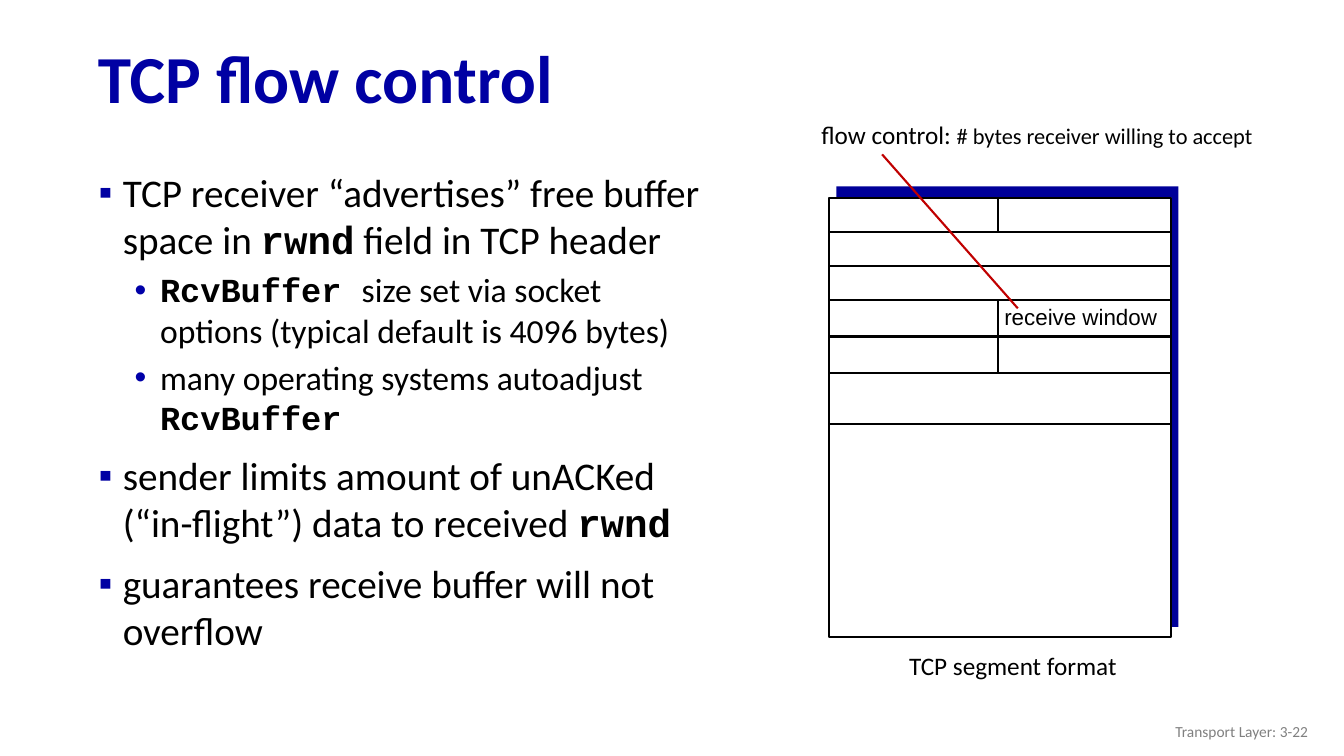
import itertools

import pptx
import pptx.dml.color
import pptx.enum.shapes
import pptx.enum.text
import pptx.oxml
import pptx.oxml.ns
import pptx.util
from lxml import etree

Cm = pptx.util.Cm
Pt = pptx.util.Pt
RGBColor = pptx.dml.color.RGBColor
Align = pptx.enum.text.PP_ALIGN
Anchor = pptx.enum.text.MSO_ANCHOR

TITLE_BLUE = RGBColor(0x00, 0x00, 0xA3)
BULLET_BLUE = RGBColor(0x00, 0x00, 0xA8)
SHADOW_BLUE = RGBColor(0x00, 0x00, 0x99)
RED = RGBColor(0xC0, 0x00, 0x00)
GRAY = RGBColor(0x80, 0x80, 0x80)
BLACK = RGBColor(0x00, 0x00, 0x00)
WHITE = RGBColor(0xFF, 0xFF, 0xFF)

BODY_FONT = "Calibri"
CODE_FONT = "Courier New"

# size, space before, left margin, hanging indent, bullet and its colour
LEVELS = [
    (28, 10, 0.99, -0.61, "▪", TITLE_BLUE),
    (24, 5, 1.93, -0.64, "•", BULLET_BLUE),
]
# level and runs; a run is its text and whether it is code
POINTS = [
    (0, [("TCP receiver “advertises” free buffer space in ", False),
         ("rwnd", True), (" field in TCP header", False)]),
    (1, [("RcvBuffer ", True),
         ("size set via socket options (typical default is 4096 bytes)", False)]),
    (1, [("many operating systems autoadjust ", False), ("RcvBuffer", True)]),
    (0, [("sender limits amount of unACKed (“in-flight”) data to received ", False),
         ("rwnd", True)]),
    (0, [("guarantees receive buffer will not overflow", False)]),
]

SEGMENT_LEFT, SEGMENT_TOP = 20.9, 4.98
SEGMENT_WIDTH, SEGMENT_HEIGHT = 8.62, 11.07
ROW_HEIGHTS = [0.86, 0.87, 0.86, 0.91, 0.92, 1.29]
MIDDLE = 25.16


def add_run(paragraph, text, size=18, font=BODY_FONT, color=BLACK, bold=False):
    run = paragraph.add_run()
    run.text = text
    run.font.size = Pt(size)
    run.font.name = font
    run.font.bold = bold
    run.font.color.rgb = color


def add_bullet(paragraph, margin, indent, character, color):
    properties = paragraph._p.get_or_add_pPr()
    properties.set("marL", str(Cm(margin)))
    properties.set("indent", str(Cm(indent)))
    qn = pptx.oxml.ns.qn
    bullet_color = etree.SubElement(properties, qn("a:buClr"))
    etree.SubElement(bullet_color, qn("a:srgbClr"), val=str(color))
    etree.SubElement(properties, qn("a:buFont"), typeface="Arial")
    etree.SubElement(properties, qn("a:buChar"), char=character)


class SlideBuilder:
    """Holds the slide and the line style shared by its elements."""

    line_width = Pt(1.5)

    def __init__(self, presentation):
        self.slide = presentation.slides.add_slide(presentation.slide_layouts[1])

    def place(self, shape, left, top, width, height, anchor):
        shape.left, shape.top = Cm(left), Cm(top)
        shape.width, shape.height = Cm(width), Cm(height)
        frame = shape.text_frame
        frame.word_wrap = True
        frame.auto_size = pptx.enum.text.MSO_AUTO_SIZE.NONE
        frame.vertical_anchor = anchor
        return frame

    def title(self, text, *box):
        frame = self.place(self.slide.shapes.title, *box, Anchor.MIDDLE)
        paragraph = frame.paragraphs[0]
        paragraph.alignment = Align.LEFT
        paragraph.line_spacing = 0.9
        add_run(paragraph, text, size=48, color=TITLE_BLUE, bold=True)

    def points(self, points, *box):
        frame = self.place(self.slide.placeholders[1], *box, Anchor.TOP)
        for number, (level, runs) in enumerate(points):
            paragraph = frame.add_paragraph() if number else frame.paragraphs[0]
            size, space, *bullet = LEVELS[level]
            paragraph.level = level
            paragraph.space_before = Pt(space)
            add_bullet(paragraph, *bullet)
            for text, code in runs:
                add_run(paragraph, text, size=size, bold=code,
                        font=CODE_FONT if code else BODY_FONT)

    def label(self, runs, *box, align=Align.LEFT, anchor=Anchor.TOP,
              spacing=1.0, wrap=True):
        """Add a text box; each run is its text and a dict of its format."""
        shape = self.slide.shapes.add_textbox(0, 0, 0, 0)
        frame = self.place(shape, *box, anchor)
        frame.word_wrap = wrap
        paragraph = frame.paragraphs[0]
        paragraph.alignment = align
        paragraph.line_spacing = spacing
        for text, style in runs:
            add_run(paragraph, text, **style)

    def rectangle(self, left, top, width, height, fill, line=None):
        shape = self.slide.shapes.add_shape(
            pptx.enum.shapes.MSO_SHAPE.RECTANGLE,
            Cm(left), Cm(top), Cm(width), Cm(height))
        shape.shadow.inherit = False
        shape.fill.solid()
        shape.fill.fore_color.rgb = fill
        if line is None:
            shape.line.fill.background()
        else:
            shape.line.color.rgb = line
            shape.line.width = self.line_width

    def line(self, x1, y1, x2, y2, color=BLACK):
        connector = self.slide.shapes.add_connector(
            pptx.enum.shapes.MSO_CONNECTOR.STRAIGHT,
            Cm(x1), Cm(y1), Cm(x2), Cm(y2))
        connector.line.color.rgb = color
        connector.line.width = self.line_width
        properties = connector._element.spPr
        etree.SubElement(properties, pptx.oxml.ns.qn("a:effectLst"))


def draw_segment(builder):
    builder.rectangle(21.08, 4.7, SEGMENT_WIDTH, 11.1, SHADOW_BLUE)
    builder.rectangle(SEGMENT_LEFT, SEGMENT_TOP, SEGMENT_WIDTH, SEGMENT_HEIGHT,
                      WHITE, line=BLACK)
    edges = list(itertools.accumulate(ROW_HEIGHTS, initial=SEGMENT_TOP))
    for edge in edges[1:]:
        builder.line(SEGMENT_LEFT, edge, SEGMENT_LEFT + SEGMENT_WIDTH, edge)
    for first, last in [(0, 1), (3, 5)]:
        builder.line(MIDDLE, edges[first], MIDDLE, edges[last])


def main():
    presentation = pptx.Presentation()
    presentation.slide_width = Cm(33.87)
    presentation.slide_height = Cm(19.05)
    builder = SlideBuilder(presentation)
    builder.title("TCP flow control", 2.21, 0.81, 31.65, 2.49)
    builder.points(POINTS, 1.85, 4.11, 16.18, 13.64)
    builder.label([("flow control: ", {}),
                   ("# bytes receiver willing to accept", {"size": 16})],
                  20.45, 2.97, 12.09, 0.94, spacing=0.9)
    draw_segment(builder)
    builder.label([("receive window", {"size": 16, "font": "Arial"})],
                  25.04, 7.52, 4.39, 0.94, align=Align.CENTER, wrap=False)
    builder.line(25.65, 7.77, 22.23, 3.89, color=RED)
    builder.label([("TCP segment format", {})],
                  22.66, 16.36, 6.43, 0.94, spacing=0.9)
    builder.label([("Transport Layer: 3-22", {"size": 11, "color": GRAY})],
                  25.6, 17.91, 7.62, 1.02, align=Align.RIGHT, anchor=Anchor.MIDDLE)
    presentation.save("out.pptx")


if __name__ == "__main__":
    main()
